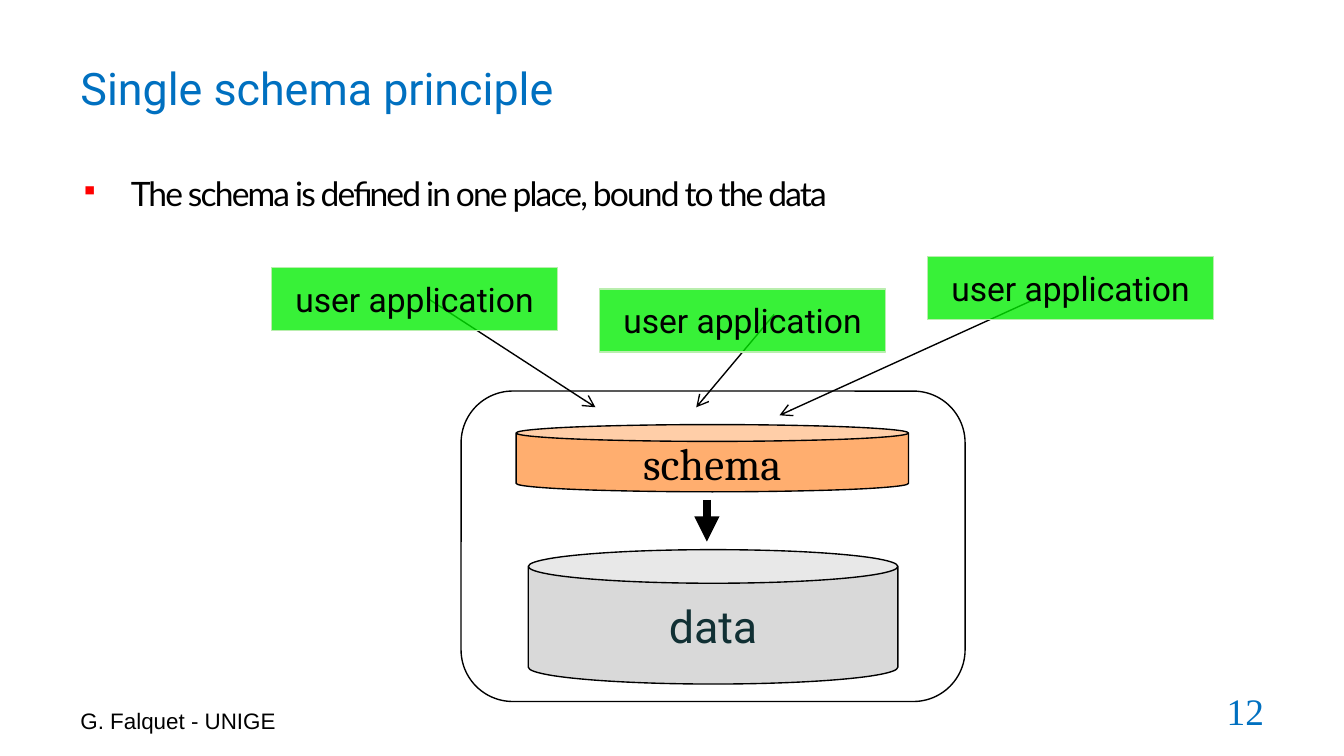
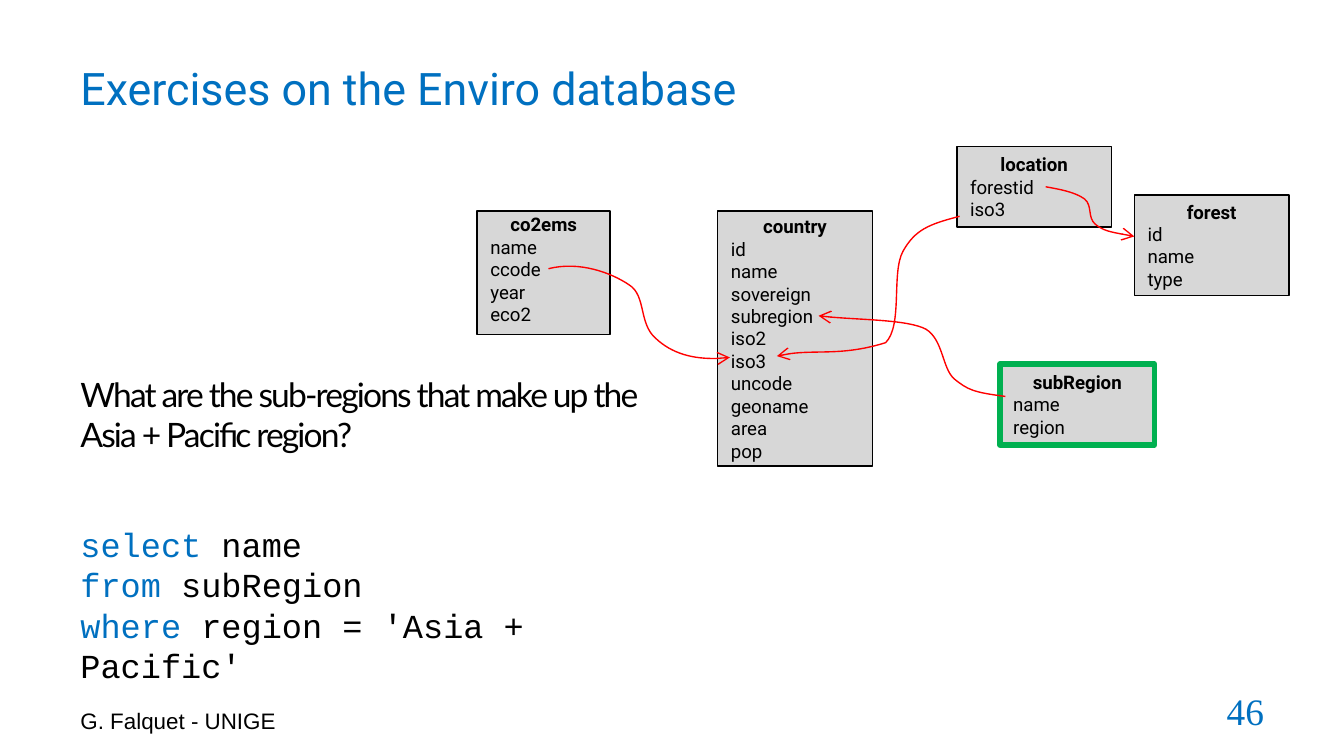
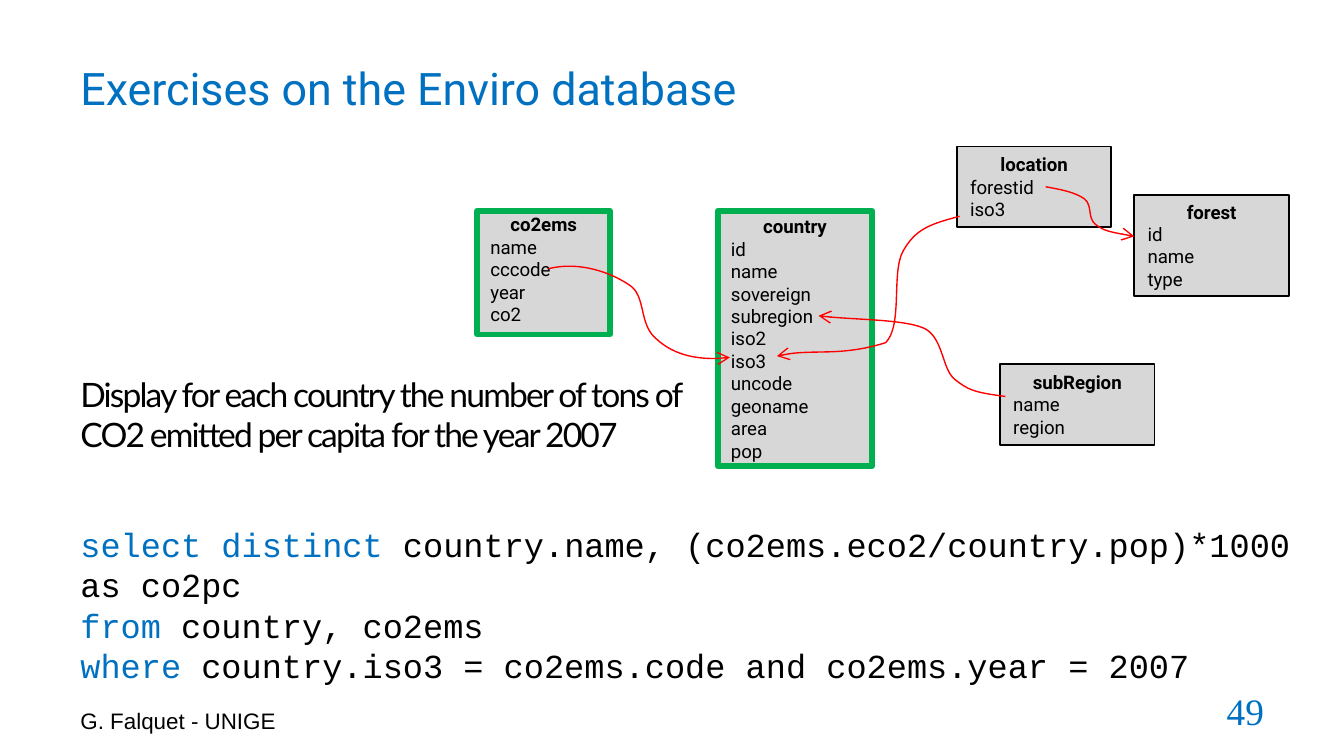
import pptx
import pptx.util
import pptx.dml.color
import pptx.enum.shapes
import pptx.enum.text
import pptx.oxml.ns
import lxml.etree
from dataclasses import dataclass

Pt = pptx.util.Pt
RGB = pptx.dml.color.RGBColor.from_string
qn = pptx.oxml.ns.qn
SHAPE = pptx.enum.shapes.MSO_SHAPE
ALIGN = pptx.enum.text.PP_ALIGN
ANCHOR = pptx.enum.text.MSO_ANCHOR


@dataclass(frozen=True)
class Theme:
    accent: str = "0070C0"
    ink: str = "000000"
    bullet: str = "FF0000"
    link: str = "FF0000"
    highlight: str = "00B050"
    table: str = "CCCCCC"
    app: str = "00EE00"
    app_edge: str = "B9EEAE"
    schema: str = "FFAE6F"
    data: str = "D9D9D9"
    data_ink: str = "113034"
    alpha: int = 78000
    thin: float = 0.75
    title: tuple = ("Roboto", 24)
    number: tuple = ("Times New Roman", 20)
    footer: tuple = ("Arial", 12)
    body: tuple = ("Lato", 18)
    code: tuple = ("Courier New", 18)
    label: tuple = ("Roboto", 18)
    field: tuple = ("Roboto", 10)
    schema_label: tuple = ("Cambria", 24)


T = Theme()


def write(shape, lines, font, color=T.ink, align=ALIGN.LEFT, anchor=ANCHOR.TOP):
    tf = shape.text_frame
    tf.word_wrap = True
    tf.vertical_anchor = anchor
    tf.text = "\n".join(lines)
    for p in tf.paragraphs:
        p.alignment = align
        for r in p.runs:
            r.font.name, r.font.size = font[0], Pt(font[1])
            r.font.color.rgb = RGB(color)
    return tf


def paint(item, line, width, fill=None, alpha=None, arrow=None):
    item.line.color.rgb = RGB(line)
    item.line.width = Pt(width)
    spPr = item._element.spPr
    if arrow:
        lxml.etree.SubElement(spPr.find(qn("a:ln")), qn("a:tailEnd"), type=arrow)
    if not hasattr(item, "fill"):
        lxml.etree.SubElement(spPr, qn("a:effectLst"))
        return
    item.shadow.inherit = False
    if fill is None:
        item.fill.background()
        return
    item.fill.solid()
    item.fill.fore_color.rgb = RGB(fill)
    if alpha:
        color = spPr.find(qn("a:solidFill"))[0]
        lxml.etree.SubElement(color, qn("a:alpha"), val=str(alpha))


prs = pptx.Presentation()
prs.slide_width, prs.slide_height = Pt(720), Pt(405)

for title, number in (("Single schema principle", "12"),
                      ("Exercises on the Enviro database", "46"),
                      ("Exercises on the Enviro database", "49")):
    s = prs.slides.add_slide(prs.slide_layouts[6])
    sp = s.shapes.add_textbox(Pt(36), Pt(22.3), Pt(636), Pt(49.7))
    write(sp, [title], T.title, T.accent, anchor=ANCHOR.MIDDLE)
    sp = s.shapes.add_textbox(Pt(516.2), Pt(368.6), Pt(168), Pt(27.4))
    write(sp, [number], T.number, T.accent, ALIGN.RIGHT, ANCHOR.BOTTOM)
    sp = s.shapes.add_textbox(Pt(36), Pt(368.6), Pt(168), Pt(28))
    write(sp, ["G. Falquet - UNIGE"], T.footer, anchor=ANCHOR.BOTTOM)

statements = (
    ("The schema is defined in one place, bound to the data", 89.3, 648, 234.7, True),
    ("What are the sub-regions that make up the Asia + Pacific region?",
     196.6, 337, 72, False),
    ("Display for each country the number of tons of CO2 emitted per capita for the year 2007",
     196.6, 337, 72, False),
)
for s, (statement, top, width, height, bulleted) in zip(prs.slides, statements):
    sp = s.shapes.add_textbox(Pt(36), Pt(top), Pt(width), Pt(height))
    p = write(sp, [statement], T.body).paragraphs[0]
    p.space_before = Pt(3.6)
    p.runs[0]._r.get_or_add_rPr().set("spc", "-100")
    if bulleted:
        pPr = p._p.get_or_add_pPr()
        pPr.set("marL", str(Pt(27)))
        pPr.set("indent", str(-Pt(27)))
        buClr = lxml.etree.SubElement(pPr, qn("a:buClr"))
        lxml.etree.SubElement(buClr, qn("a:srgbClr"), val=T.bullet)
        lxml.etree.SubElement(pPr, qn("a:buSzPct"), val="75000")
        lxml.etree.SubElement(pPr, qn("a:buChar"), char="▪")

s = prs.slides[0]
for name, left, top, width, height, fill, font, ink in (
        ("data", 283, 294.5, 198, 72, T.data, T.title, T.data_ink),
        ("schema", 276.5, 227.5, 210.2, 36, T.schema, T.schema_label, T.ink)):
    sp = s.shapes.add_shape(SHAPE.CAN, Pt(left), Pt(top), Pt(width), Pt(height))
    paint(sp, T.ink, T.thin, fill)
    write(sp, [name], font, ink, ALIGN.CENTER, ANCHOR.MIDDLE)

for x1, y1, x2, y2, width, head in (
        (229, 159.8, 319, 218.2, T.thin, "arrow"),
        (378.7, 267.8, 378.7, 290.2, 4.5, "triangle"),
        (414.7, 168.5, 373, 218.2, T.thin, "arrow"),
        (553.7, 160.6, 417.6, 222.5, T.thin, "arrow")):
    arrow = s.shapes.add_connector(pptx.enum.shapes.MSO_CONNECTOR.STRAIGHT,
                                   Pt(x1), Pt(y1), Pt(x2), Pt(y2))
    paint(arrow, T.ink, width, arrow=head)

database = s.shapes.add_shape(SHAPE.ROUNDED_RECTANGLE, Pt(247), Pt(209.5), Pt(270), Pt(166.3))
paint(database, T.ink, T.thin)

for i, top in enumerate((143.3, 154.8, 137.5)):
    sp = s.shapes.add_shape(SHAPE.RECTANGLE, Pt(145.4 + 175.7 * i), Pt(top), Pt(153.4), Pt(33.8))
    paint(sp, T.app_edge, T.thin, T.app, T.alpha)
    write(sp, ["user application"], T.label, T.ink, ALIGN.CENTER, ANCHOR.MIDDLE)

tables = (
    ("forest", 607.7, 104.4, 82.8, 54, "id name type"),
    ("country", 384.5, 113, 82.8, 136.8,
     "id name sovereign subregion iso2 iso3 uncode geoname area pop"),
    ("location", 512.6, 78.5, 82.8, 43.2, "forestid iso3"),
    ("subRegion", 535.7, 195.1, 82.8, 43.2, "name region"),
    ("co2ems", 255.6, 113, 71.3, 66.2, None),
)
foreign_keys = (
    ((293.8, 144), (310.3, 139.7), (327.6, 146.2), (337, 152.6), (346.3, 158.4),
     (342, 173.5), (351.4, 181.4), (360, 189.4), (375.1, 193.7), (391, 191.5)),
    ((514.1, 115.9), (497.5, 120.2), (490.3, 123.1), (483.8, 134.6), (477.4, 146.2),
     (483.8, 174.2), (474.5, 183.6), (451.4, 190.8), (433.4, 186.5), (416.2, 190.8)),
    ((560.2, 100.1), (568.1, 101.5), (576, 103), (581, 106.6), (585.4, 110.2),
     (582.5, 116.6), (586.8, 120.2), (591.1, 123.8), (599.8, 125.3), (607.7, 126.7)),
    ((538.6, 212.4), (521.3, 210.2), (518.4, 208.8), (511.2, 203), (504.7, 197.3),
     (505.4, 182.2), (496.1, 176.4), (486.7, 171.4), (455.8, 171.4), (438.5, 169.2)),
)
exercises = (
    (prs.slides[1], ("subRegion",), T.thin, "name ccode year eco2", 311.8, 94.3,
     (("select", " name"),
      ("from", " subRegion"),
      ("where", " region = 'Asia + Pacific'"))),
    (prs.slides[2], ("country", "co2ems"), 1, "name cccode year co2", 676.8, 72.7,
     (("select distinct ", "country.name, (co2ems.eco2/country.pop)*1000 as co2pc"),
      ("from", " country, co2ems"),
      ("where", " country.iso3 = co2ems.code and co2ems.year = 2007"))),
)

for s, used, edge, emission_fields, query_width, query_height, query in exercises:
    for name, left, top, width, height, fields in tables:
        sp = s.shapes.add_shape(SHAPE.RECTANGLE, Pt(left), Pt(top), Pt(width), Pt(height))
        line = (T.highlight, 3) if name in used else (T.ink, edge)
        paint(sp, *line, T.table, T.alpha)
        rows = [name] + (fields or emission_fields).split()
        tf = write(sp, rows, T.field, anchor=ANCHOR.MIDDLE)
        tf.paragraphs[0].alignment = ALIGN.CENTER
        tf.paragraphs[0].runs[0].font.bold = True
        if name == "co2ems":
            tf.margin_top = 0

    for start, *controls in foreign_keys:
        builder = s.shapes.build_freeform(Pt(start[0]), Pt(start[1]))
        builder.add_line_segments([(Pt(x), Pt(y)) for x, y in controls], close=False)
        curve = builder.convert_to_shape()
        paint(curve, T.link, T.thin, arrow="arrow")
        outline = curve._element.xpath(".//a:path")[0]
        steps = outline.findall(qn("a:lnTo"))
        for i in range(0, len(steps), 3):
            bezier = lxml.etree.SubElement(outline, qn("a:cubicBezTo"))
            for step in steps[i:i + 3]:
                bezier.append(step[0])
                outline.remove(step)

    sp = s.shapes.add_textbox(Pt(36), Pt(277.2), Pt(query_width), Pt(query_height))
    tf = write(sp, [keyword for keyword, rest in query], T.code, T.accent)
    tf.auto_size = pptx.enum.text.MSO_AUTO_SIZE.SHAPE_TO_FIT_TEXT
    for p, (keyword, rest) in zip(tf.paragraphs, query):
        r = p.add_run()
        r.text = rest
        r.font.name, r.font.size = T.code[0], Pt(T.code[1])
        r.font.color.rgb = RGB(T.ink)

prs.save("out.pptx")
